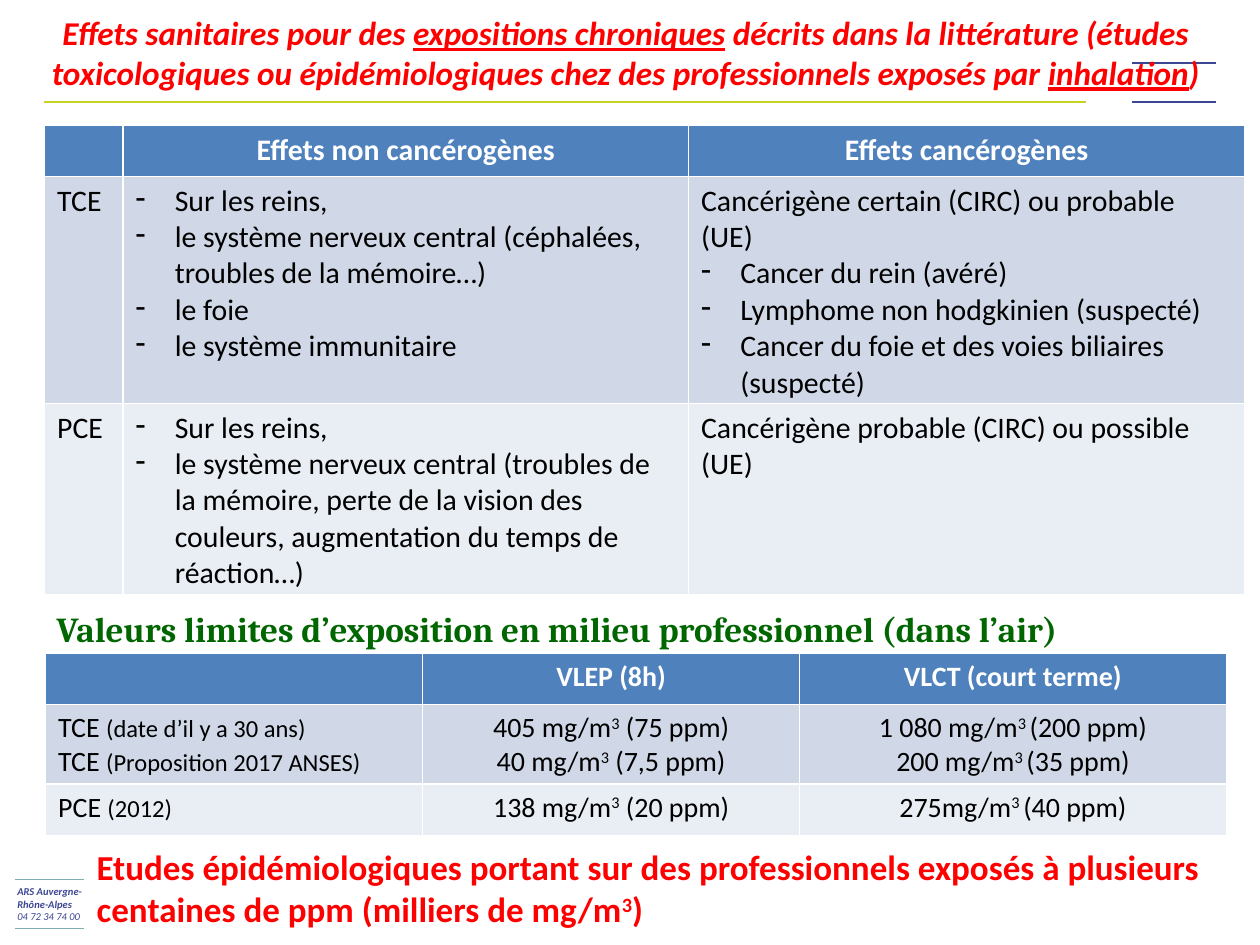
from lxml import etree
from pptx import Presentation
from pptx.dml.color import RGBColor
from pptx.enum.shapes import MSO_CONNECTOR
from pptx.enum.text import MSO_AUTO_SIZE, PP_ALIGN
from pptx.oxml.ns import qn
from pptx.util import Cm, Pt

STRAIGHT = MSO_CONNECTOR.STRAIGHT
GROW = MSO_AUTO_SIZE.SHAPE_TO_FIT_TEXT
LEFT, CENTER = PP_ALIGN.LEFT, PP_ALIGN.CENTER
NAVY, TEAL, LIME = "3C4693", "7FADB3", "C8D223"
RED, GREEN, WHITE, BLACK = "FF0000", "006600", "FFFFFF", "000000"
HEADER_FILL, BAND_FILLS = "4F81BD", ("D0D8E8", "E9EDF4")
DASH = "- "


def color(value):
    """Turn a hex string into a colour."""
    return RGBColor.from_string(value)


def add_run(paragraph, text, size, hex_color, name="Calibri", bold=False,
            italic=False, underline=False, superscript=False):
    """Add one formatted run to a paragraph."""
    run = paragraph.add_run()
    run.text = text
    font = run.font
    font.name, font.size = name, Pt(size)
    font.bold, font.italic, font.underline = bold, italic, underline
    font.color.rgb = color(hex_color)
    if superscript:
        run._r.get_or_add_rPr().set("baseline", "30000")


def add_dash(paragraph):
    """Give a paragraph a hanging dash bullet."""
    properties = paragraph._p.get_or_add_pPr()
    properties.set("marL", str(Cm(0.79)))
    properties.set("indent", str(-Cm(0.79)))
    etree.SubElement(properties, qn("a:buChar")).set("char", "-")


def write_paragraphs(frame, paragraphs, alignment=LEFT, line_spacing=None, **style):
    """Fill a text frame; each paragraph is a list of (text, changes) runs."""
    for index, runs in enumerate(paragraphs):
        paragraph = frame.add_paragraph() if index else frame.paragraphs[0]
        paragraph.alignment = alignment
        if line_spacing:
            paragraph.line_spacing = Pt(line_spacing)
        if isinstance(runs, str):
            if runs.startswith(DASH):
                add_dash(paragraph)
            runs = [(runs.removeprefix(DASH), {})]
        for text, changes in runs:
            if text == "\n":
                paragraph.add_line_break()
            else:
                add_run(paragraph, text, **{**style, **changes})


def add_text(slide, left, top, width, height, paragraphs, **style):
    """Add a wrapping text box."""
    box = slide.shapes.add_textbox(Cm(left), Cm(top), Cm(width), Cm(height))
    box.text_frame.word_wrap = True
    box.text_frame.auto_size = GROW
    write_paragraphs(box.text_frame, paragraphs, **style)


def add_rule(slide, left, right, y, hex_color, width):
    """Add a horizontal rule without a shadow."""
    rule = slide.shapes.add_connector(STRAIGHT, Cm(left), Cm(y), Cm(right), Cm(y))
    rule.line.color.rgb = color(hex_color)
    rule.line.width = Pt(width)
    etree.SubElement(rule._element.spPr, qn("a:effectLst"))


def add_table(slide, left, top, widths, heights, rows, size, alignments):
    """Add a table with a header row and banded body rows."""
    table = slide.shapes.add_table(
        len(rows), len(widths), Cm(left), Cm(top), Cm(sum(widths)), Cm(sum(heights))).table
    for column, width in zip(table.columns, widths):
        column.width = Cm(width)
    for row, height in zip(table.rows, heights):
        row.height = Cm(height)
    for row_index, row in enumerate(rows):
        header = row_index == 0
        for column_index, paragraphs in enumerate(row):
            cell = table.cell(row_index, column_index)
            cell.fill.solid()
            cell.fill.fore_color.rgb = color(
                HEADER_FILL if header else BAND_FILLS[(row_index - 1) % 2])
            write_paragraphs(
                cell.text_frame, paragraphs,
                alignment=CENTER if header else alignments[column_index],
                size=size, hex_color=WHITE if header else BLACK, bold=header)


def substance(name, note):
    """Return the runs of a substance with its small note."""
    return [(f"{name} ", {}), (f"({note})", {"size": 14})]


def limit(amount, parts, exponent="3", gap=""):
    """Return the runs of an exposure limit in mg/m³ and ppm."""
    return [(f"{amount}mg/m", {}), (exponent, {"superscript": True}),
            (f"{gap}({parts} ppm)", {})]


def long_limit(amount, parts):
    """Return an eight-hour limit, with a full-size gap."""
    return limit(amount, parts, gap=" ")


def short_limit(amount, parts):
    """Return a short-term limit, with a narrow gap."""
    return limit(amount, parts, exponent="3 ")


def add_frame(slide):
    """Add the rules and the contact block around the content."""
    for y in (1.27, 2.06):
        add_rule(slide, 22.81, 24.51, y, NAVY, 1)
    contact = [
        [("ARS Auvergne-", {"bold": True}), ("\n", {}), ("Rhône-Alpes", {"bold": True})],
        "04 72 34 74 00"]
    add_text(slide, 0.1, 17.73, 2.01, 1.02, contact, line_spacing=7,
             size=6, hex_color=NAVY, italic=True)
    for y in (18.72, 17.73):
        add_rule(slide, 0.3, 1.7, y, TEAL, 0.75)
    add_rule(slide, 0.89, 21.89, 2.06, LIME, 1)


def main():
    """Build the slide and save it."""
    presentation = Presentation()
    presentation.slide_width, presentation.slide_height = Cm(25.4), Cm(19.05)
    slide = presentation.slides.add_slide(presentation.slide_layouts[6])
    add_frame(slide)

    underlined = {"underline": True}
    title = [
        ("Effets sanitaires pour des ", {}),
        ("expositions chroniques", underlined),
        (" décrits dans la littérature (études toxicologiques ou épidémiologiques "
         "chez des professionnels exposés par ", {}),
        ("inhalation", underlined), (")", {})]
    add_text(slide, 0.51, 0.13, 24.2, 1.88, [title], alignment=CENTER,
             size=19, hex_color=RED, bold=True, italic=True)

    effects = [
        [[], ["Effets non cancérogènes"], ["Effets cancérogènes"]],
        [["TCE"],
         ["- Sur les reins,",
          "- le système nerveux central (céphalées, troubles de la mémoire…)",
          "- le foie", "- le système immunitaire"],
         ["Cancérigène certain (CIRC) ou probable (UE)", "- Cancer du rein (avéré)",
          "- Lymphome non hodgkinien (suspecté)",
          "- Cancer du foie et des voies biliaires (suspecté)"]],
        [["PCE"],
         ["- Sur les reins,",
          "- le système nerveux central (troubles de la mémoire, perte de la vision "
          "des couleurs, augmentation du temps de réaction…)"],
         ["Cancérigène probable (CIRC) ou possible (UE)"]]]
    add_table(slide, 0.9, 2.53, (1.58, 11.4, 11.21), (1.03, 4.57, 3.84),
              effects, 17, (LEFT, LEFT, LEFT))

    add_text(slide, 0.89, 12.12, 24.51, 1.11,
             ["Valeurs limites d’exposition en milieu professionnel (dans l’air)"],
             size=20, hex_color=GREEN, name="Cambria", bold=True)

    limits = [
        [[], ["VLEP (8h)"], ["VLCT (court terme)"]],
        [[substance("TCE", "date d’il y a 30 ans"),
          substance("TCE", "Proposition 2017 ANSES")],
         [long_limit("405 ", "75"), long_limit("40 ", "7,5")],
         [short_limit("1 080 ", "200"), short_limit("200 ", "35")]],
        [[substance("PCE", "2012")],
         [long_limit("138 ", "20")], [short_limit("275", "40")]]]
    add_table(slide, 0.92, 13.17, (7.6, 7.6, 8.6), (1.03, 1.6, 1.03),
              limits, 16, (LEFT, CENTER, CENTER))

    conclusion = [
        ("Etudes épidémiologiques portant sur des professionnels exposés à plusieurs "
         "centaines de ppm (milliers de mg/m", {}),
        ("3", {"superscript": True}), (")", {})]
    add_text(slide, 1.7, 16.92, 23.01, 1.96, [conclusion],
             size=20, hex_color=RED, bold=True)
    presentation.save("out.pptx")


if __name__ == "__main__":
    main()
